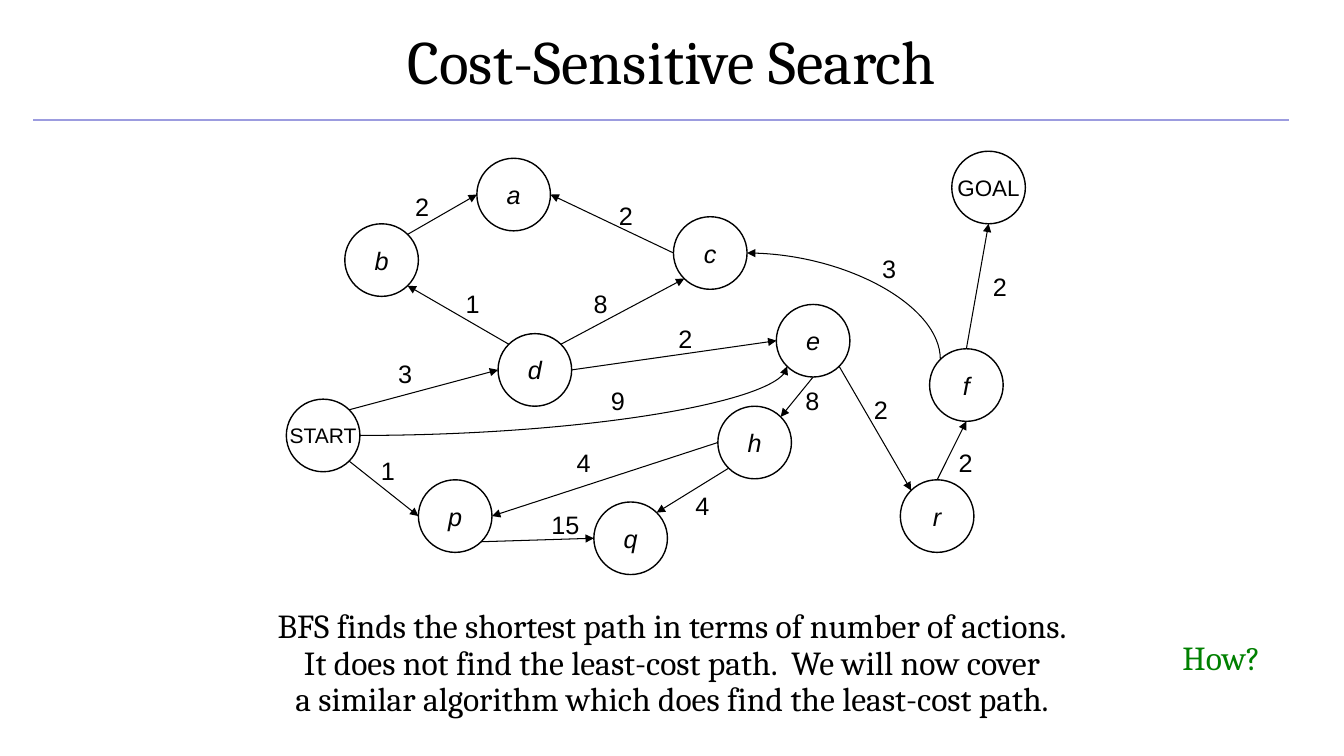
from dataclasses import dataclass
from math import sqrt

from lxml import etree
from pptx import Presentation
from pptx.dml.color import RGBColor
from pptx.enum.shapes import MSO_CONNECTOR, MSO_SHAPE
from pptx.enum.text import MSO_ANCHOR, MSO_AUTO_SIZE, PP_ALIGN
from pptx.oxml.ns import qn
from pptx.util import Inches, Pt


@dataclass(frozen=True)
class Theme:
    ink: RGBColor = RGBColor(0x00, 0x00, 0x00)
    rule: RGBColor = RGBColor(0x9C, 0x9C, 0xDF)
    question: RGBColor = RGBColor(0x00, 0x80, 0x00)
    serif: str = "Cambria"
    sans: str = "Arial"
    title: int = 44
    body: int = 24
    label: int = 18
    goal: int = 16
    start: int = 15


THEME = Theme()
NODE_W, NODE_H = 0.73, 0.72

# Left and top of each state
NODES = {
    "START": (2.84, 3.96), "GOAL": (9.44, 1.5), "d": (4.94, 3.31),
    "b": (3.42, 2.22), "p": (4.15, 4.76), "q": (5.89, 4.98),
    "c": (6.68, 2.15), "e": (7.7, 3.02), "h": (7.12, 4.03),
    "a": (4.73, 1.57), "f": (9.22, 3.46), "r": (8.93, 4.76),
}

# From, side, to, side, cost, left and top of the cost
STRAIGHT_EDGES = [
    ("START", "SE", "p", "W", "1", 3.68, 4.47),
    ("p", "SE", "q", "W", "15", 5.37, 5.0),
    ("h", "SW", "q", "NE", "4", 6.8, 4.82),
    ("h", "W", "p", "E", "4", 5.62, 4.39),
    ("e", "S", "h", "NE", "8", 7.89, 3.77),
    ("e", "SE", "r", "NW", "2", 8.57, 3.86),
    ("r", "N", "f", "S", "2", 9.41, 4.39),
    ("f", "N", "GOAL", "S", "2", 9.75, 2.64),
    ("START", "NE", "d", "W", "3", 3.85, 3.51),
    ("d", "NW", "b", "SE", "1", 4.52, 2.81),
    ("b", "NE", "a", "W", "2", 4.02, 1.85),
    ("c", "W", "a", "E", "2", 6.04, 1.94),
    ("d", "NE", "c", "SW", "8", 5.79, 2.81),
    ("d", "E", "e", "W", "2", 6.63, 3.16),
]
CURVED_EDGES = [
    ("f", "NW", "c", "E", "3", 8.65, 2.46),
    ("START", "E", "e", "SW", "9", 5.96, 3.77),
]

# Connection sites of a circle, in index order
SITES = ["N", "NW", "W", "SW", "S", "SE", "E", "NE"]


def site_point(name, side):
    """Point on a state's outline in a compass direction."""
    left, top = NODES[name]
    dx = ("E" in side) - ("W" in side)
    dy = ("S" in side) - ("N" in side)
    reach = 0.5 / sqrt(dx * dx + dy * dy)
    return left + NODE_W * (0.5 + dx * reach), top + NODE_H * (0.5 + dy * reach)


def style_paragraph(p, size, font, color=THEME.ink, align=PP_ALIGN.LEFT):
    p.alignment = align
    p.font.size = Pt(size)
    p.font.name = font
    p.font.color.rgb = color


def add_text(s, box, lines, size, font, color=THEME.ink,
             align=PP_ALIGN.LEFT, wrap=True, spacing=None):
    tf = s.shapes.add_textbox(*map(Inches, box)).text_frame
    tf.word_wrap = wrap
    for i, line in enumerate(lines):
        p = tf.add_paragraph() if i else tf.paragraphs[0]
        p.text = line
        p.line_spacing = spacing
        style_paragraph(p, size, font, color, align)


def add_title(s, text):
    title = s.shapes.title
    title.left, title.top = Inches(0), Inches(-0.03)
    title.width, title.height = Inches(13.33), Inches(1.25)
    tf = title.text_frame
    tf.auto_size = MSO_AUTO_SIZE.NONE
    tf.vertical_anchor = MSO_ANCHOR.MIDDLE
    tf.text = text
    style_paragraph(tf.paragraphs[0], THEME.title, THEME.serif, align=PP_ALIGN.CENTER)


def add_node(s, name):
    left, top = NODES[name]
    sp = s.shapes.add_shape(MSO_SHAPE.FLOWCHART_CONNECTOR, Inches(left),
                            Inches(top), Inches(NODE_W), Inches(NODE_H))
    sp.shadow.inherit = False
    sp.fill.background()
    sp.line.color.rgb = THEME.ink
    sp.line.width = Pt(1)
    tf = sp.text_frame
    tf.word_wrap = False
    tf.vertical_anchor = MSO_ANCHOR.MIDDLE
    p = tf.paragraphs[0]
    p.text = name
    size = {"START": THEME.start, "GOAL": THEME.goal}.get(name, THEME.label)
    style_paragraph(p, size, THEME.sans, align=PP_ALIGN.CENTER)
    p.font.italic = len(name) == 1
    return sp


def add_line(s, begin, end, color, width, kind=MSO_CONNECTOR.STRAIGHT, arrow=False):
    line = s.shapes.add_connector(kind, *map(Inches, (*begin, *end)))
    line.line.color.rgb = color
    line.line.width = Pt(width)
    if arrow:
        etree.SubElement(line.line._get_or_add_ln(), qn("a:tailEnd"), type="triangle")
    etree.SubElement(line._element.spPr, qn("a:effectLst"))
    return line


def add_straight_edge(s, shapes, source, out, target, into):
    line = add_line(s, site_point(source, out), site_point(target, into),
                    THEME.ink, 0.75, arrow=True)
    # Join to the circles, which have eight sites each
    joints = line._element.nvCxnSpPr.cNvCxnSpPr
    for tag, name, side in (("a:stCxn", source, out), ("a:endCxn", target, into)):
        etree.SubElement(joints, qn(tag), id=str(shapes[name].shape_id),
                         idx=str(SITES.index(side)))


def add_curved_edge(s, source, out, target, into):
    begin, end = site_point(source, out), site_point(target, into)
    upward = "N" in out
    if upward:
        # Lay the box on its side, so that a quarter turn makes the curve leave upward
        (x1, y1), (x2, y2) = begin, end
        cx, cy = (x1 + x2) / 2, (y1 + y2) / 2
        dx, dy = (x1 - x2) / 2, (y1 - y2) / 2
        begin, end = (cx + dy, cy - dx), (cx - dy, cy + dx)
    curve = add_line(s, begin, end, THEME.ink, 0.75, MSO_CONNECTOR.CURVE, arrow=True)
    spPr = curve._element.spPr
    spPr.find(qn("a:prstGeom")).set("prst", "curvedConnector2")
    if upward:
        spPr.find(qn("a:xfrm")).set("rot", "5400000")


def add_cost(s, cost, left, top):
    width = 0.17 * (len(cost) + 1)
    add_text(s, (left, top, width, 0.4), [cost], THEME.label, THEME.sans, wrap=False)


def main():
    prs = Presentation()
    prs.slide_width, prs.slide_height = Inches(13.33), Inches(7.5)
    s = prs.slides.add_slide(prs.slide_layouts[5])

    # Heading
    add_line(s, (0.33, 1.19), (12.78, 1.19), THEME.rule, 1)
    add_title(s, "Cost-Sensitive Search")

    # State graph
    shapes = {name: add_node(s, name) for name in NODES}
    for *ends, cost, left, top in STRAIGHT_EDGES:
        add_straight_edge(s, shapes, *ends)
        add_cost(s, cost, left, top)
    for *ends, cost, left, top in CURVED_EDGES:
        add_curved_edge(s, *ends)
        add_cost(s, cost, left, top)

    # Conclusion and question
    add_text(s, (0, 6, 13.33, 1.34), [
        "BFS finds the shortest path in terms of number of actions.",
        "It does not find the least-cost path.  We will now cover",
        "a similar algorithm which does find the least-cost path.",
    ], THEME.body, THEME.serif, align=PP_ALIGN.CENTER, spacing=0.9)
    add_text(s, (11.63, 6.27, 1.67, 0.5), ["How?"], THEME.body, THEME.serif, THEME.question)

    prs.save("out.pptx")


if __name__ == "__main__":
    main()
